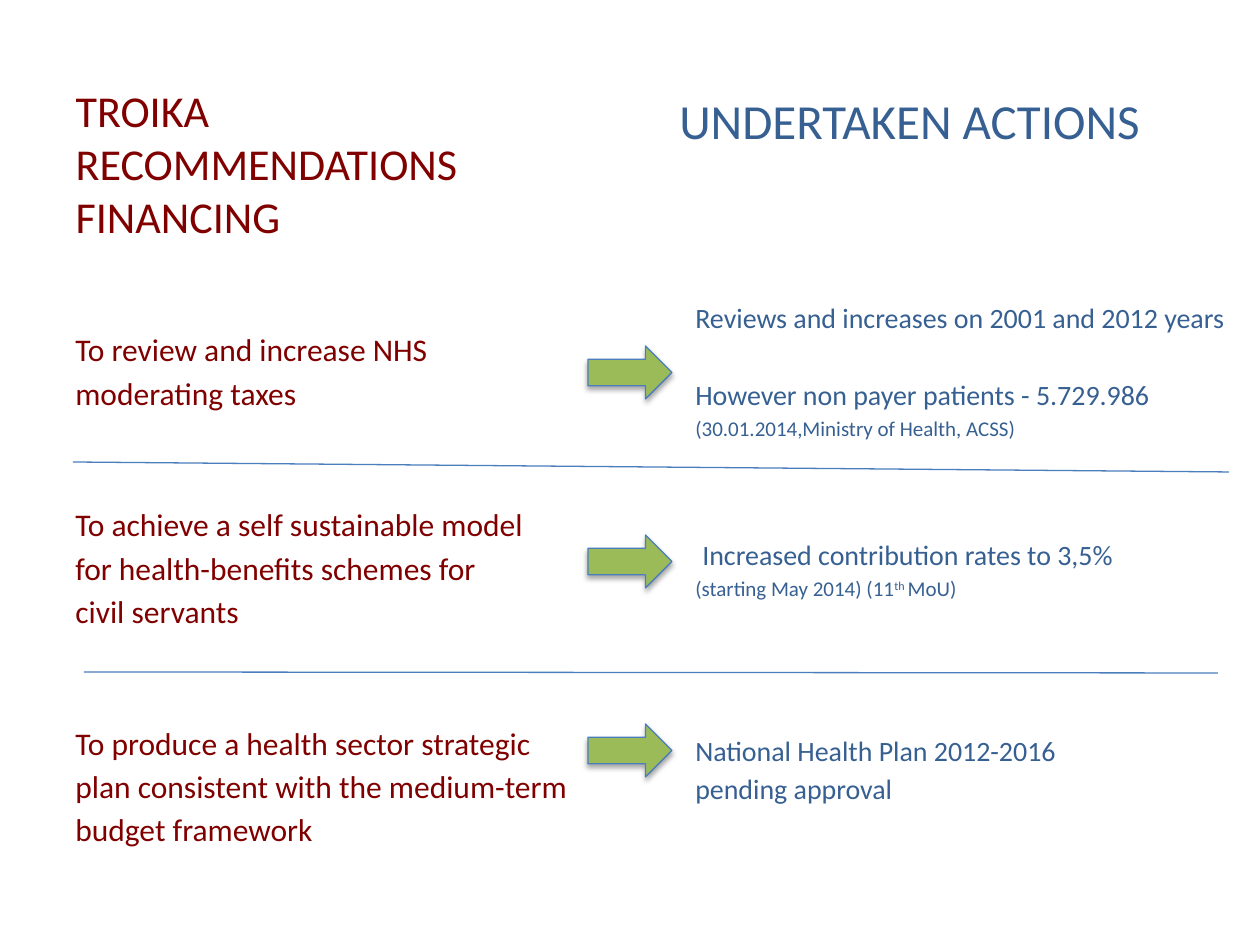
from dataclasses import dataclass

from lxml.etree import SubElement
from pptx import Presentation
from pptx.dml.color import RGBColor
from pptx.enum.shapes import MSO_CONNECTOR, MSO_SHAPE
from pptx.enum.text import MSO_ANCHOR, MSO_AUTO_SIZE, PP_ALIGN
from pptx.oxml.ns import qn
from pptx.util import Emu, Pt


@dataclass(frozen=True)
class Theme:
    font: str = "Calibri"
    red: str = "800000"
    blue: str = "376092"
    green: str = "9BBB59"
    outline: str = "4B7EBC"
    shadow: str = "000000"
    title: float = 25.2
    heading: int = 28
    body: int = 18
    action: int = 16
    note: int = 12
    line: float = 0.75


THEME = Theme()
PX = 914400 / 126

TITLE = "TROIKA RECOMMENDATIONS FINANCING"
HEADING = "UNDERTAKEN ACTIONS"
GROUP_GAP = 53.6
RECOMMENDATIONS = [
    ["To review and increase NHS", "moderating taxes"],
    ["To achieve a self sustainable model", "for health-benefits schemes for", "civil servants"],
    ["To produce a health sector strategic", "plan consistent with the medium-term", "budget framework"],
]
ACTIONS = [
    (["Reviews and increases on 2001 and 2012 years"], THEME.action, 0, 0),
    (["However non payer patients - 5.729.986"], THEME.action, 25.2, 0),
    (["(30.01.2014,Ministry of Health, ACSS)"], THEME.note, 2.1, 0),
    (["Increased contribution rates to 3,5%"], THEME.action, 55.5, 7),
    (["(starting May 2014) (11", "th ", "MoU)"], THEME.note, 2.6, 0),
    (["National Health Plan 2012-2016"], THEME.action, 75.6, 0),
    (["pending approval"], THEME.action, 2.8, 0),
]
DIVIDERS = [(73, 462, 1229, 472), (84, 672, 1218, 673)]
ARROW_LEFT, ARROW_TOP, ARROW_STEP = 588, 346, 189
ARROW_WIDTH, ARROW_HEIGHT = 84, 53


def px(*values):
    return [Emu(round(value * PX)) for value in values]


def style(para, size, color):
    for span in para.runs:
        span.font.name = THEME.font
        span.font.size = Pt(size)
        span.font.color.rgb = RGBColor.from_string(color)


def add_text(slide, place, lines, color, wrap=True):
    frame = slide.shapes.add_textbox(*px(*place)).text_frame
    frame.word_wrap = wrap
    for index, (spans, size, before, indent) in enumerate(lines):
        para = frame.paragraphs[0] if index == 0 else frame.add_paragraph()
        para.space_before = Pt(before)
        if indent:
            para._p.get_or_add_pPr().set("marL", str(px(indent)[0]))
        for text in spans:
            span = para.add_run()
            span.text = text
            if text == "th ":
                span.font._element.set("baseline", "30000")
        style(para, size, color)
    return frame


def add_title(slide):
    title = slide.shapes.title
    title.left, title.top, title.width, title.height = px(63, 84, 537, 158)
    frame = title.text_frame
    frame.text = TITLE
    frame.auto_size = MSO_AUTO_SIZE.NONE
    frame.vertical_anchor = MSO_ANCHOR.MIDDLE
    frame.paragraphs[0].alignment = PP_ALIGN.LEFT
    style(frame.paragraphs[0], THEME.title, THEME.red)


def outline(shape):
    shape.line.color.rgb = RGBColor.from_string(THEME.outline)
    shape.line.width = Pt(THEME.line)


def add_divider(slide, ends):
    divider = slide.shapes.add_connector(MSO_CONNECTOR.STRAIGHT, *px(*ends))
    outline(divider)
    SubElement(divider._element.spPr, qn("a:effectLst"))


def add_arrow(slide, top):
    arrow = slide.shapes.add_shape(
        MSO_SHAPE.RIGHT_ARROW, *px(ARROW_LEFT, top, ARROW_WIDTH, ARROW_HEIGHT))
    arrow.fill.solid()
    arrow.fill.fore_color.rgb = RGBColor.from_string(THEME.green)
    outline(arrow)
    effects = SubElement(arrow._element.spPr, qn("a:effectLst"))
    shadow = SubElement(effects, qn("a:outerShdw"), blurRad=str(Pt(3.1)),
                        dist=str(Pt(1.8)), dir="5400000", rotWithShape="0")
    color = SubElement(shadow, qn("a:srgbClr"), val=THEME.shadow)
    SubElement(color, qn("a:alpha"), val="35000")


def main():
    deck = Presentation()
    deck.slide_width, deck.slide_height = px(1260, 945)
    slide = deck.slides.add_slide(deck.slide_layouts[5])
    add_title(slide)

    lines = [([text], THEME.body, 3.2 if row else GROUP_GAP if group else 0, 0)
             for group, texts in enumerate(RECOMMENDATIONS)
             for row, text in enumerate(texts)]
    add_text(slide, (63, 324, 557, 595), lines, THEME.red, wrap=False)
    add_text(slide, (683, 294, 577, 525), ACTIONS, THEME.blue)
    heading = add_text(slide, (656, 84, 507, 180),
                       [([HEADING], THEME.heading, 0, 0)], THEME.blue)
    heading.paragraphs[0].alignment = PP_ALIGN.CENTER

    for ends in DIVIDERS:
        add_divider(slide, ends)
    for row in range(len(RECOMMENDATIONS)):
        add_arrow(slide, ARROW_TOP + row * ARROW_STEP)
    deck.save("out.pptx")


if __name__ == "__main__":
    main()
